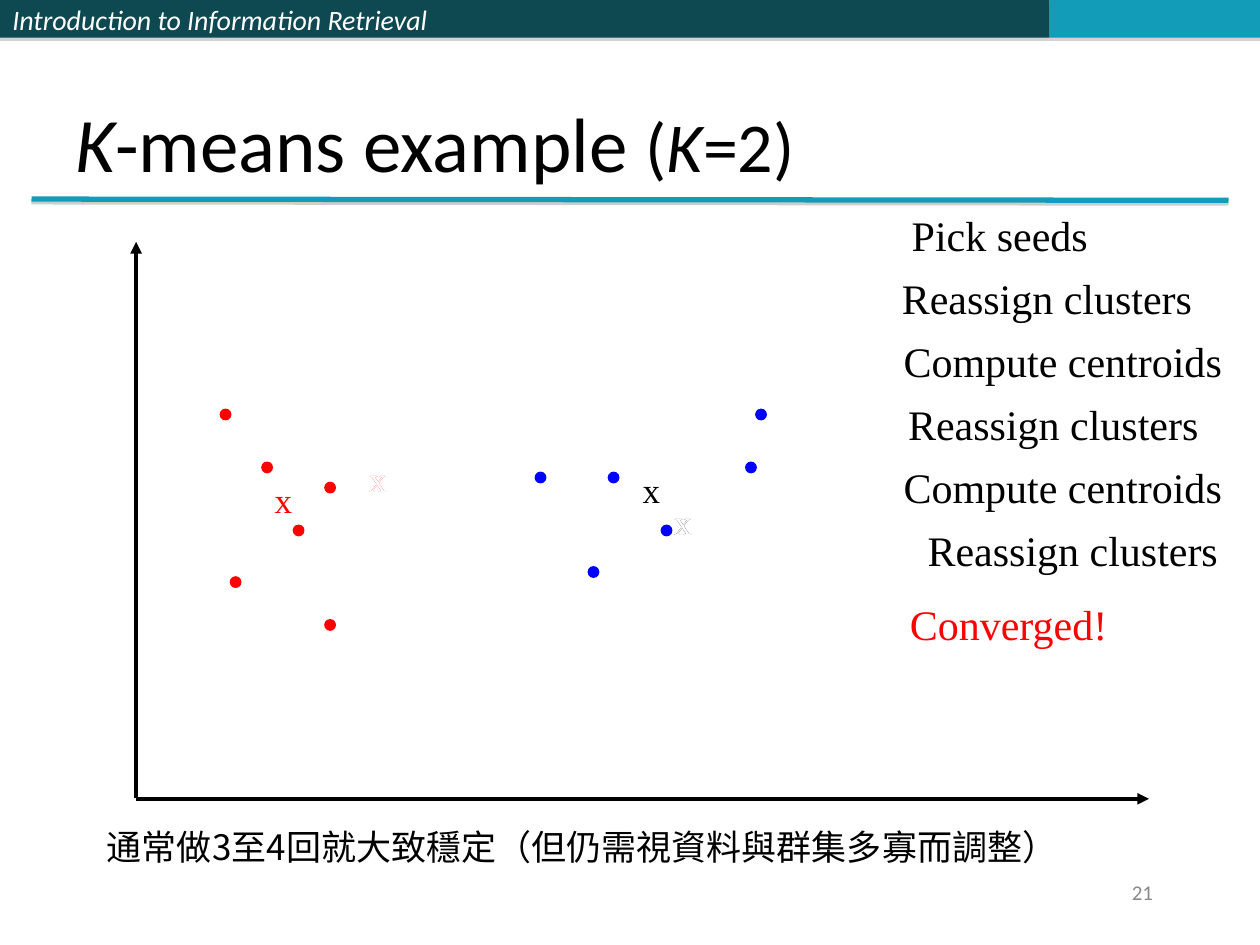
from lxml.etree import SubElement
from pptx import Presentation
from pptx.dml.color import RGBColor
from pptx.enum.shapes import MSO_CONNECTOR, MSO_SHAPE
from pptx.enum.text import MSO_ANCHOR, PP_ALIGN
from pptx.oxml.ns import qn
from pptx.util import Inches, Pt

COLORS = {
    "dark": "0E4851", "teal": "139CB7", "shadow": "808080", "number": "898989",
    "black": "000000", "white": "FFFFFF", "red": "FF0000", "blue": "0000FF",
}
SERIF = "Times New Roman"


def rgb(name):
    return RGBColor.from_string(COLORS[name])


def write(frame, runs, font, color, align=PP_ALIGN.LEFT, anchor=MSO_ANCHOR.TOP, wrap=False):
    """Fill a text frame with one paragraph of (text, size, italic) runs."""
    frame.word_wrap = wrap
    frame.vertical_anchor = anchor
    para = frame.paragraphs[0]
    para.alignment = align
    for text, size, italic in runs:
        span = para.add_run()
        span.text = text
        span.font.name = font
        span.font.size = Pt(size)
        span.font.italic = italic
        span.font.color.rgb = rgb(color)
        SubElement(span.font._element, qn("a:ea"), typeface=font)


deck = Presentation()
deck.slide_width, deck.slide_height = Inches(10), Inches(7.5)
page = deck.slides.add_slide(deck.slide_layouts[6])

# Header bar: effect lists to receive a drop shadow are collected with their settings
shadows = []
bars = []
for left, width, color in [(0, 4.08, "dark"), (4.08, 4.25, "dark"), (8.33, 1.67, "teal")]:
    bar = page.shapes.add_shape(
        MSO_SHAPE.RECTANGLE, Inches(left), Inches(0), Inches(width), Inches(0.3))
    bar.fill.solid()
    bar.fill.fore_color.rgb = rgb(color)
    bar.line.fill.background()
    bar.shadow.inherit = False
    shadows.append((bar._element.spPr.find(qn("a:effectLst")), 35000, 1.8))
    bars.append(bar)
write(bars[0].text_frame, [("Introduction to Information Retrieval", 16, True)],
      "Calibri", "white", anchor=MSO_ANCHOR.MIDDLE, wrap=True)

# Title rule, then the vertical and horizontal axes
for x1, y1, x2, y2, color, weight, is_axis in [
    (0.25, 1.58, 9.75, 1.59, "teal", 3, False),
    (1.08, 6.33, 1.08, 1.92, "black", 2.25, True),
    (1.08, 6.34, 9.12, 6.34, "black", 2.25, True),
]:
    line = page.shapes.add_connector(
        MSO_CONNECTOR.STRAIGHT, Inches(x1), Inches(y1), Inches(x2), Inches(y2))
    line.line.color.rgb = rgb(color)
    line.line.width = Pt(weight)
    if is_axis:
        SubElement(line.line._get_or_add_ln(), qn("a:tailEnd"), type="triangle")
    effects = SubElement(line._element.spPr, qn("a:effectLst"))
    if not is_axis:
        shadows.append((effects, 38000, 1.6))

for effects, alpha, distance in shadows:
    shadow = SubElement(effects, qn("a:outerShdw"), blurRad="0", dist=str(Pt(distance)),
                        dir="5400000", rotWithShape="0")
    tint = SubElement(shadow, qn("a:srgbClr"), val=COLORS["shadow"])
    SubElement(tint, qn("a:alpha"), val=str(alpha))

title = page.shapes.add_textbox(Inches(0.5), Inches(0.11), Inches(8.99), Inches(1.43))
write(title.text_frame,
      [("K", 44, True), ("-means example ", 44, False),
       ("(", 40, False), ("K", 40, True), ("=2)", 40, False)],
      "Calibri", "black", anchor=MSO_ANCHOR.BOTTOM, wrap=True)

# Data points of the two clusters
points = {
    "red": [(1.75, 3.25), (2.08, 3.67), (2.58, 3.83), (2.33, 4.17), (2.58, 4.92), (1.83, 4.58)],
    "blue": [(5.25, 4.17), (4.67, 4.5), (5.92, 3.67), (4.83, 3.75), (6, 3.25), (4.25, 3.75)],
}
for color, places in points.items():
    for left, top in places:
        dot = page.shapes.add_shape(
            MSO_SHAPE.OVAL, Inches(left), Inches(top), Inches(0.08), Inches(0.08))
        dot.fill.solid()
        dot.fill.fore_color.rgb = rgb(color)
        dot.line.color.rgb = rgb(color)
        dot.line.width = Pt(1)
        dot.shadow.inherit = False

# Centroids: the first pair is masked in white, then drawn at its new place
for left, top, color in [
    (2.83, 3.58, "red"), (5.25, 3.92, "black"),
    (5.25, 3.92, "white"), (2.83, 3.58, "white"),
    (5, 3.67, "black"), (2.08, 3.75, "red"),
]:
    mark = page.shapes.add_textbox(Inches(left), Inches(top), Inches(0.34), Inches(0.43))
    write(mark.text_frame, [("x", 20, False)], SERIF, color, PP_ALIGN.CENTER)

# Steps of the algorithm, half an inch apart
steps = [
    ("Pick seeds", 7.13, 1.61), ("Reassign clusters", 7.05, 2.52),
    ("Compute centroids", 7.06, 2.75), ("Reassign clusters", 7.1, 2.52),
    ("Compute centroids", 7.06, 2.75), ("Reassign clusters", 7.25, 2.53),
]
for index, (text, left, width) in enumerate(steps):
    step = page.shapes.add_textbox(
        Inches(left), Inches(1.61 + 0.5 * index), Inches(width), Inches(0.51))
    write(step.text_frame, [(text, 24, False)], SERIF, "black", PP_ALIGN.CENTER)

result = page.shapes.add_textbox(Inches(7.12), Inches(4.7), Inches(1.77), Inches(0.5))
write(result.text_frame, [("Converged!", 24, False)], SERIF, "red", PP_ALIGN.CENTER)

remark = page.shapes.add_textbox(Inches(0.75), Inches(6.5), Inches(7.92), Inches(0.44))
write(remark.text_frame, [("通常做3至4回就大致穩定（但仍需視資料與群集多寡而調整）", 20, False)],
      "Noto Sans CJK SC", "black", wrap=True)

number = page.shapes.add_textbox(Inches(7.17), Inches(6.83), Inches(2.08), Inches(0.5))
write(number.text_frame, [("21", 12, False)], "Calibri", "number",
      PP_ALIGN.RIGHT, MSO_ANCHOR.MIDDLE, wrap=True)

deck.save("out.pptx")
